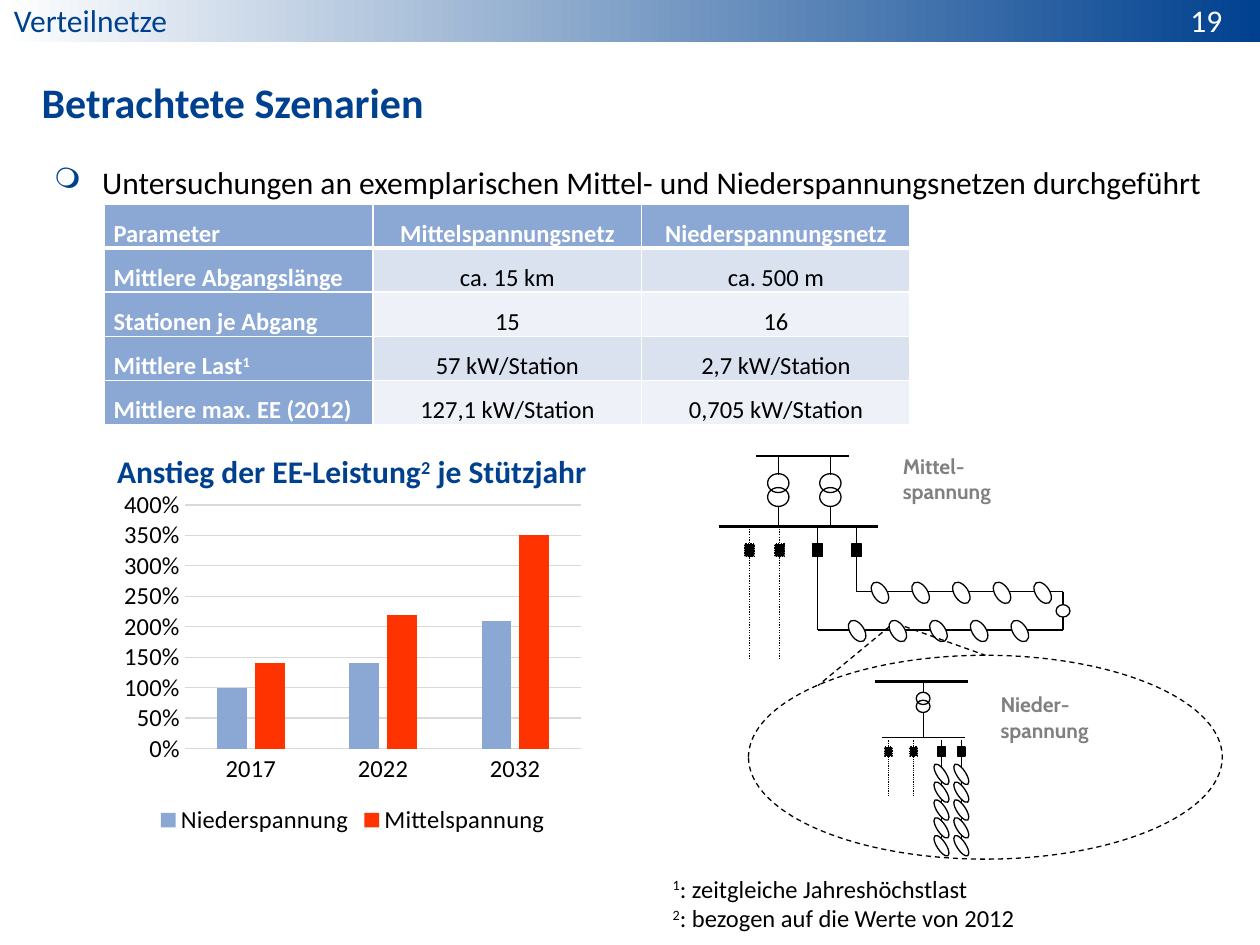
from lxml import etree
from pptx import Presentation, util as u
from pptx.chart import data
from pptx.dml import color
from pptx.enum import chart as ch, dml, shapes, text
from pptx.oxml import ns

Cm, Pt = u.Cm, u.Pt
HUES = {"navy": "00418F", "sky": "8BA8D5", "red": "FF3300", "black": "000000",
        "white": "FFFFFF", "gray": "808080", "rule": "D9D9D9",
        "odd": "DAE1EF", "even": "EEF1F7"}
MID = text.MSO_ANCHOR.MIDDLE
DOTS, DASH = dml.MSO_LINE.ROUND_DOT, dml.MSO_LINE.DASH
BODY = {"size": Pt(14), "name": "Calibri"}
HEAD = {"size": Pt(18), "name": "Calibri"}
LABEL = {"size": Pt(12), "name": "Cabin", "bold": True}
RECT, OVAL = shapes.MSO_SHAPE.RECTANGLE, shapes.MSO_SHAPE.OVAL


def rgb(hue):
    return color.RGBColor.from_string(HUES[hue])


def apply(obj, vals):
    for key, val in vals.items():
        setattr(obj, key, val)


def margins(l=0.25, t=0.13, r=0.25, b=0.13):
    return {"margin_left": Cm(l), "margin_top": Cm(t),
            "margin_right": Cm(r), "margin_bottom": Cm(b)}


def style(font, form, hue):
    apply(font, form)
    font.color.rgb = rgb(hue)


def write(para, parts, form, hue):
    """Add runs; "^" marks a superscript and None a line break."""
    for part in parts:
        if part is None:
            para.add_line_break()
            continue
        run = para.add_run()
        run.text = part.lstrip("^")
        style(run.font, form, hue)
        if part.startswith("^"):
            run._r.get_or_add_rPr().set("baseline", "30000")


def textbox(sl, box, lines, form, hue, align=None, **frame):
    tf = sl.shapes.add_textbox(*map(Cm, box)).text_frame
    apply(tf, {"word_wrap": True, **margins(), **frame})
    for i, parts in enumerate(lines):
        para = tf.add_paragraph() if i else tf.paragraphs[0]
        para.alignment = align
        write(para, parts, form, hue)
    return tf


def wire(sl, x1, y1, x2, y2, width=0.75, dash=None):
    line = sl.shapes.add_connector(shapes.MSO_CONNECTOR.STRAIGHT,
                                   *map(Cm, (x1, y1, x2, y2)))
    line.line.color.rgb = rgb("black")
    apply(line.line, {"width": Pt(width), "dash_style": dash})
    etree.SubElement(line._element.spPr, ns.qn("a:effectLst"))


def node(sl, kind, x, y, w, h, fill="white", width=0.75, dash=None, turn=0):
    """Draw a shape centred on x, y."""
    shp = sl.shapes.add_shape(kind, *map(Cm, (x - w / 2, y - h / 2, w, h)))
    shp.shadow.inherit = False
    shp.rotation = turn
    if fill:
        shp.fill.solid()
        shp.fill.fore_color.rgb = rgb(fill)
    else:
        shp.fill.background()
    shp.line.color.rgb = rgb("black")
    apply(shp.line, {"width": Pt(width), "dash_style": dash})


def trafo(sl, x, y, size, tops, ends, width):
    """Hang a transformer from y: coil centres and lead ends lie below it."""
    for top, fill in zip(tops, ("white", None)):
        node(sl, OVAL, x, y + top, *size, fill=fill, width=0)
    wire(sl, x, y, x, y + ends[0])
    wire(sl, x, y + ends[1], x, y + ends[2], width)


def feeder(sl, x, y, size, gap, length, width, dash=None):
    wire(sl, x, y, x, y + length, width, dash)
    node(sl, RECT, x, y + gap + size[1] / 2, *size, fill="black", width=0, dash=dash)


def loads(sl, x, y, size, dx=0.0, dy=0.0):
    for i in range(5):
        node(sl, OVAL, x + i * dx, y + i * dy, *size, turn=326.8)


def medium(sl, x, y):
    bus, end, rows = y + 1.42, x + 6.93, (y + 2.74, y + 3.51)
    wire(sl, x + 0.74, y, x + 2.62, y, 1.5)
    wire(sl, x, bus, x + 3.2, bus, 1.5)
    for dx in (1.19, 2.24):
        trafo(sl, x + dx, y, (0.43, 0.38), (0.55, 0.83), (0.38, 1.02, 1.42), 0.75)
    for dx, low, dash in ((0.61, bus + 2.67, DOTS), (1.22, bus + 2.67, DOTS),
                          (1.98, rows[1], None), (2.77, rows[0], None)):
        feeder(sl, x + dx, bus, (0.2, 0.25), 0.36, low - bus, 0.75, dash)
    for row, dx, first in zip(rows, (2.77, 1.98), (3.24, 2.78)):
        wire(sl, x + dx, row, end, row)
        loads(sl, x + first, row + 0.02, (0.28, 0.48), dx=0.82)
    wire(sl, end, rows[0], end, rows[1])
    node(sl, OVAL, end, sum(rows) / 2, 0.28, 0.25)
    textbox(sl, (x + 3.45, y - 0.18, 4.55, 1.27), [["Mittel-", None, "spannung"]],
            LABEL, "gray")


def low(sl, x, y, w, h):
    top, bus, start = y + 0.53, y + 1.65, y + 1.7
    node(sl, OVAL, x + w / 2, y + h / 2, w, h, fill=None, dash=DASH)
    wire(sl, x + 3.15, y - 0.58, x + w / 2, y, dash=DASH)
    wire(sl, x + 2.84, y - 0.58, x + 1.4, y + 0.61, dash=DASH)
    wire(sl, x + 2.54, top, x + 4.42, top, 1.5)
    wire(sl, x + 2.69, bus, x + 4.37, bus, 0.5)
    trafo(sl, x + 3.52, top, (0.28, 0.25), (0.34, 0.5), (0.23, 0.64, 1.12), 0.5)
    for dx in (2.82, 3.33):
        feeder(sl, x + dx, start, (0.15, 0.18), 0.15, 1.14, 0.5, DOTS)
    for dx in (3.89, 4.29):
        feeder(sl, x + dx, start, (0.15, 0.18), 0.15, 2.08, 0.5)
        loads(sl, x + dx, start + 0.7, (0.18, 0.48), dy=0.36)
    textbox(sl, (x + 4.83, y + 0.61, 4.55, 1.27), [["Nieder-", None, "spannung"]],
            LABEL, "gray")


def border(cell, base):
    for side in "LRTB":
        width = Pt(base if side == "B" else 1)
        line = etree.SubElement(cell._tc.get_or_add_tcPr(), ns.qn(f"a:ln{side}"), w=str(width))
        fill = etree.SubElement(line, ns.qn("a:solidFill"))
        etree.SubElement(fill, ns.qn("a:srgbClr"), val=HUES["white"])


def grid(sl, x, y, w, h):
    rows = [[["Parameter"], ["Mittelspannungsnetz"], ["Niederspannungsnetz"]],
            [["Mittlere Abgangslänge"], ["ca. 15 km"], ["ca. 500 m"]],
            [["Stationen je Abgang"], ["15"], ["16"]],
            [["Mittlere Last", "^1"], ["57 kW/Station"], ["2,7 kW/Station"]],
            [["Mittlere max. EE (2012)"], ["127,1 kW/Station"], ["0,705 kW/Station"]]]
    tab = sl.shapes.add_table(len(rows), 3, *map(Cm, (x, y, w, h))).table
    for r, row in enumerate(rows):
        for c, parts in enumerate(row):
            cell, main = tab.cell(r, c), r == 0 or c == 0
            border(cell, 1 if r else 3)
            apply(cell, margins(0.18, 0, 0.18, 0))
            cell.vertical_anchor = MID if r else text.MSO_ANCHOR.TOP
            cell.fill.solid()
            cell.fill.fore_color.rgb = rgb("sky" if main else "odd" if r % 2 else "even")
            para = cell.text_frame.paragraphs[0]
            apply(para, {"line_spacing": 1.5, "space_after": Pt(6),
                         "alignment": text.PP_ALIGN.CENTER if c else text.PP_ALIGN.JUSTIFY})
            write(para, parts, {**BODY, "bold": main}, "white" if main else "black")


def columns(sl, x, y, w, h):
    info = data.CategoryChartData(number_format="0%")
    info.categories = ["2017", "2022", "2032"]
    info.add_series("Niederspannung", (1, 1.4, 2.1))
    info.add_series("Mittelspannung", (1.4, 2.2, 3.5))
    cht = sl.shapes.add_chart(ch.XL_CHART_TYPE.COLUMN_CLUSTERED,
                              *map(Cm, (x, y, w, h)), info).chart
    apply(cht, {"has_title": False, "has_legend": True})
    apply(cht.legend, {"position": ch.XL_LEGEND_POSITION.BOTTOM, "include_in_layout": False})
    plot, cats, vals = cht.plots[0], cht.category_axis, cht.value_axis
    apply(plot, {"gap_width": 219, "overlap": -27, "vary_by_categories": False})
    for ser, hue in zip(plot.series, ("sky", "red")):
        ser.format.fill.solid()
        ser.format.fill.fore_color.rgb = rgb(hue)
    for axis in (cats, vals):
        axis.major_tick_mark = axis.minor_tick_mark = ch.XL_TICK_MARK.NONE
    apply(vals, {"minimum_scale": 0, "maximum_scale": 4, "major_unit": 0.5})
    apply(vals.tick_labels, {"number_format": "0%", "number_format_is_linked": False})
    vals.format.line.fill.background()
    for line in (cats.format.line, vals.major_gridlines.format.line):
        line.color.rgb = rgb("rule")
        line.width = Pt(0.75)
    for part in (cht, cats.tick_labels, vals.tick_labels, cht.legend):
        style(part.font, BODY, "black")
    textbox(sl, (x - 0.2, y - 0.74, 10.21, 1.02),
            [["Anstieg der EE-Leistung", "^2", " je Stützjahr"]],
            {**HEAD, "bold": True}, "navy", word_wrap=False)


def header(sl, w, h):
    bar = sl.shapes.add_shape(RECT, 0, 0, Cm(w), Cm(h))
    bar.shadow.inherit = False
    bar.line.fill.background()
    bar.fill.gradient()
    bar.fill.gradient_angle = 0
    for stop, hue, pos in zip(bar.fill.gradient_stops, ("white", "navy"), (0, 1)):
        stop.color.rgb = rgb(hue)
        stop.position = pos
    textbox(sl, (0.28, 0, 9.6, 0.8), [["Verteilnetze"]], HEAD, "navy",
            vertical_anchor=MID, **margins(0, 0, 0.25, 0))
    textbox(sl, (18.72, 0, 5.92, 0.8), [["19"]], HEAD, "white", text.PP_ALIGN.RIGHT,
            vertical_anchor=MID, **margins(0.25, 0, 0, 0))


def title(sl, x, y, w, h):
    shp = sl.shapes.title
    apply(shp, dict(zip(("left", "top", "width", "height"), map(Cm, (x, y, w, h)))))
    apply(shp.text_frame, {"vertical_anchor": MID, "auto_size": text.MSO_AUTO_SIZE.NONE,
                           **margins(0, 0, 0, 0)})
    para = shp.text_frame.paragraphs[0]
    para.alignment = text.PP_ALIGN.LEFT
    write(para, ["Betrachtete Szenarien"],
          {"size": Pt(24), "name": "Calibri", "bold": True}, "navy")


def bullet(sl, box):
    tf = textbox(sl, box, [["Untersuchungen an exemplarischen Mittel- und "
                            "Niederspannungsnetzen durchgeführt"]],
                 HEAD, "black", **margins(t=0.41))
    ppr = tf.paragraphs[0]._p.get_or_add_pPr()
    apply_indent = {"marL": Cm(0.97), "indent": -Cm(0.97)}
    for key, val in apply_indent.items():
        ppr.set(key, str(val))
    hue = etree.SubElement(ppr, ns.qn("a:buClr"))
    etree.SubElement(hue, ns.qn("a:srgbClr"), val=HUES["navy"])
    etree.SubElement(ppr, ns.qn("a:buSzPct"), val="90000")
    etree.SubElement(ppr, ns.qn("a:buChar"), char="❍")


def main():
    prs = Presentation()
    prs.slide_width, prs.slide_height = Cm(25.4), Cm(19.05)
    sl = prs.slides.add_slide(prs.slide_layouts[5])
    header(sl, 25.4, 0.84)
    title(sl, 0.84, 1.27, 23.8, 1.57)
    bullet(sl, (0.84, 2.87, 23.8, 1.2))
    grid(sl, 2.11, 4.11, 16.24, 4.45)
    medium(sl, 14.5, 9.19)
    low(sl, 15.09, 13.21, 9.55, 4.11)
    columns(sl, 2.31, 9.73, 9.6, 7.21)
    textbox(sl, (13.31, 17.48, 7.49, 1.45),
            [["^1", ": zeitgleiche Jahreshöchstlast"],
             ["^2", ": bezogen auf die Werte von 2012"]], BODY, "black", word_wrap=False)
    prs.save("out.pptx")


if __name__ == "__main__":
    main()
